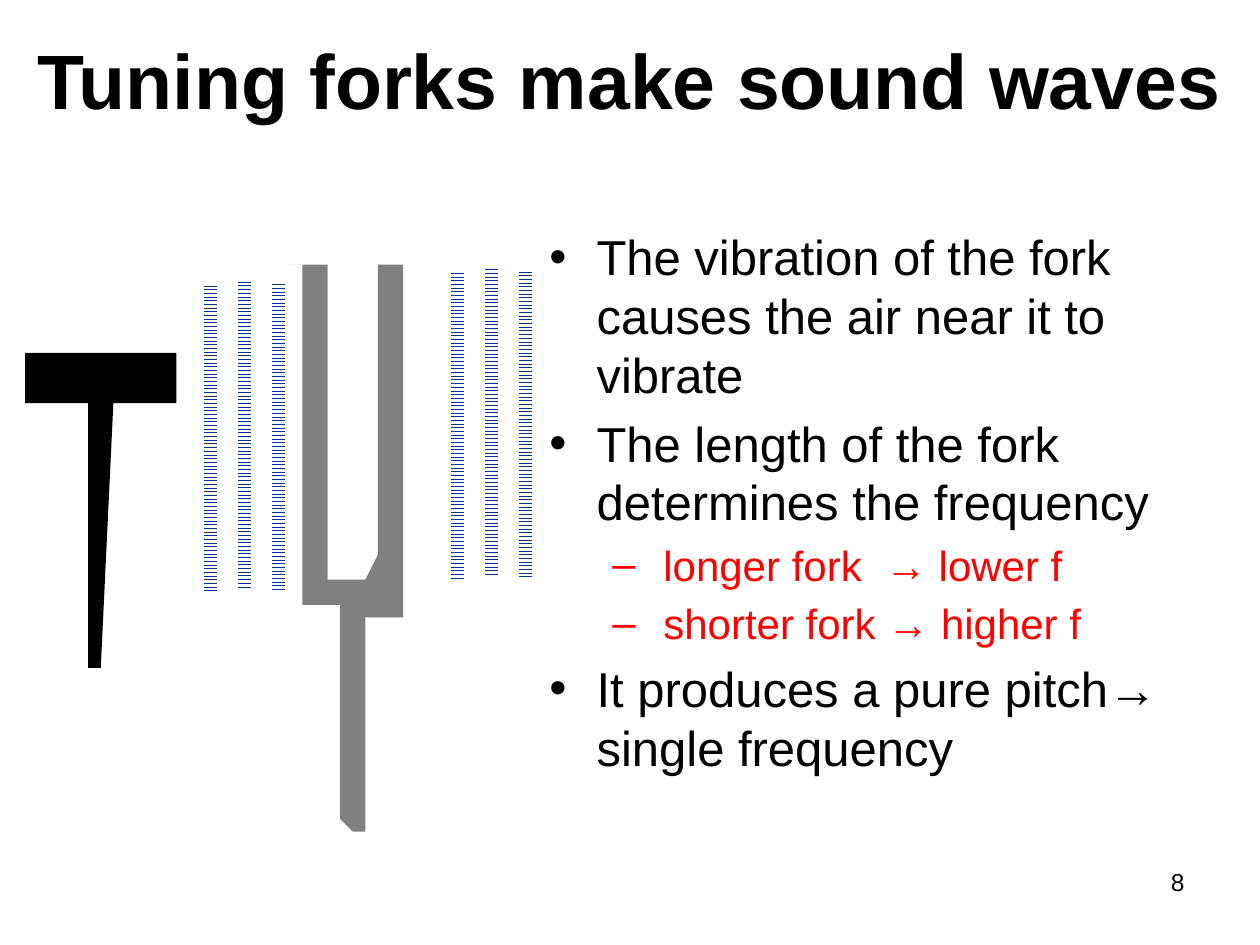
from dataclasses import dataclass

from pptx import Presentation
from pptx import util as u
from pptx.dml.color import RGBColor
from pptx.enum import dml, text

# The slide is a grid of 100 columns by 75 rows of square cells.
COLUMNS, ROWS = 100, 75
CELL = u.Inches(0.1)

BLACK = RGBColor(0x00, 0x00, 0x00)
WHITE = RGBColor(0xFF, 0xFF, 0xFF)
RED = RGBColor(0xFF, 0x00, 0x00)
GRAY = RGBColor(0x80, 0x80, 0x80)
WAVE_BLUE = RGBColor(0x00, 0x33, 0x99)
FONT = "Arial"


@dataclass(frozen=True)
class Area:
    left: float
    top: float
    width: float
    height: float

    def lengths(self) -> tuple[int, ...]:
        return tuple(cells(n) for n in (self.left, self.top, self.width, self.height))


@dataclass(frozen=True)
class Outline:
    corners: tuple[tuple[float, float], ...]
    color: RGBColor


@dataclass(frozen=True)
class Point:
    wording: str
    level: int = 0
    size: int = 28
    color: RGBColor = BLACK


@dataclass(frozen=True)
class WaveSet:
    """Three wave bars, spaced evenly from a left and top cell."""
    left: float
    top: float


TITLE_AREA = Area(0, 0, COLUMNS, 12.5)
POINTS_AREA = Area(42.6, 17.5, 52.4, 49.5)
NUMBER_AREA = Area(71.7, 68.3, 23.3, 5.2)

POINTS = (
    Point("The vibration of the fork causes the air near it to vibrate"),
    Point("The length of the fork determines the frequency"),
    Point(" longer fork  → lower f", 1, 24, RED),
    Point(" shorter fork → higher f", 1, 24, RED),
    Point("It produces a pure pitch→ single frequency"),
)

FORK = Outline((
    (23.3, 20.8), (25.6, 21), (25.6, 44.7), (26.3, 46.2), (29.3, 46.2),
    (30.1, 44.4), (30.1, 21), (32, 21), (31.9, 48.6), (29.2, 48.6),
    (29.2, 65.5), (28.2, 65.5), (26.7, 65.2), (26.7, 48.5), (23.6, 47.7),
    (23.6, 20.8),
), GRAY)
HAMMER = Outline((
    (6.6, 53.1), (6.6, 31.7), (2.1, 31.7), (2.1, 28), (13.6, 28),
    (13.6, 31.9), (8.8, 31.7), (8.5, 53.1),
), BLACK)

WAVE_SETS = (WaveSet(35.8, 21.1), WaveSet(16.2, 22.1))
WAVE_GAP = 2.7
WAVE_DROPS = (0.3, 0, 0.2)
WAVE_WIDTH, WAVE_HEIGHT = 1, 24.5


def cells(count: float) -> int:
    return round(count * CELL)


def place(shape, area: Area) -> None:
    shape.left, shape.top, shape.width, shape.height = area.lengths()


def add_run(paragraph, wording: str, size: int, color: RGBColor, bold: bool = False) -> None:
    run = paragraph.add_run()
    run.text = wording
    run.font.name = FONT
    run.font.size = u.Pt(size)
    run.font.bold = bold
    run.font.color.rgb = color


def fill_title(title) -> None:
    place(title, TITLE_AREA)
    title.fill.solid()
    title.fill.fore_color.rgb = WHITE
    frame = title.text_frame
    frame.auto_size = text.MSO_AUTO_SIZE.NONE
    frame.vertical_anchor = text.MSO_ANCHOR.MIDDLE
    heading = frame.paragraphs[0]
    heading.alignment = text.PP_ALIGN.CENTER
    add_run(heading, "Tuning forks make sound waves", 44, BLACK, bold=True)


def fill_points(body) -> None:
    place(body, POINTS_AREA)
    frame = body.text_frame
    frame.auto_size = text.MSO_AUTO_SIZE.NONE
    for index, point in enumerate(POINTS):
        paragraph = frame.add_paragraph() if index else frame.paragraphs[0]
        paragraph.level = point.level
        add_run(paragraph, point.wording, point.size, point.color)


def draw_outline(slide, outline: Outline) -> None:
    start, *others = outline.corners
    builder = slide.shapes.build_freeform(*start, scale=CELL)
    builder.add_line_segments(others, close=True)
    shape = builder.convert_to_shape()
    shape.shadow.inherit = False
    shape.fill.solid()
    shape.fill.fore_color.rgb = outline.color
    shape.line.fill.background()


def draw_waves(slide, waves: WaveSet) -> None:
    group = slide.shapes.add_group_shape()
    for index, drop in enumerate(WAVE_DROPS):
        area = Area(waves.left + index * WAVE_GAP, waves.top + drop, WAVE_WIDTH, WAVE_HEIGHT)
        bar = group.shapes.add_shape(1, *area.lengths())
        bar.shadow.inherit = False
        bar.fill.patterned()
        bar.fill.pattern = dml.MSO_PATTERN.ZIG_ZAG
        bar.fill.fore_color.rgb = WAVE_BLUE
        bar.fill.back_color.rgb = WHITE
        bar.line.fill.background()


def add_page_number(slide) -> None:
    frame = slide.shapes.add_textbox(*NUMBER_AREA.lengths()).text_frame
    frame.word_wrap = True
    number = frame.paragraphs[0]
    number.alignment = text.PP_ALIGN.RIGHT
    add_run(number, "8", 14, BLACK)


def main() -> None:
    deck = Presentation()
    deck.slide_width, deck.slide_height = cells(COLUMNS), cells(ROWS)
    slide = deck.slides.add_slide(deck.slide_layouts[1])
    fill_title(slide.shapes.title)
    fill_points(slide.placeholders[1])
    for outline in (FORK, HAMMER):
        draw_outline(slide, outline)
    for waves in WAVE_SETS:
        draw_waves(slide, waves)
    add_page_number(slide)
    deck.save("out.pptx")


if __name__ == "__main__":
    main()
